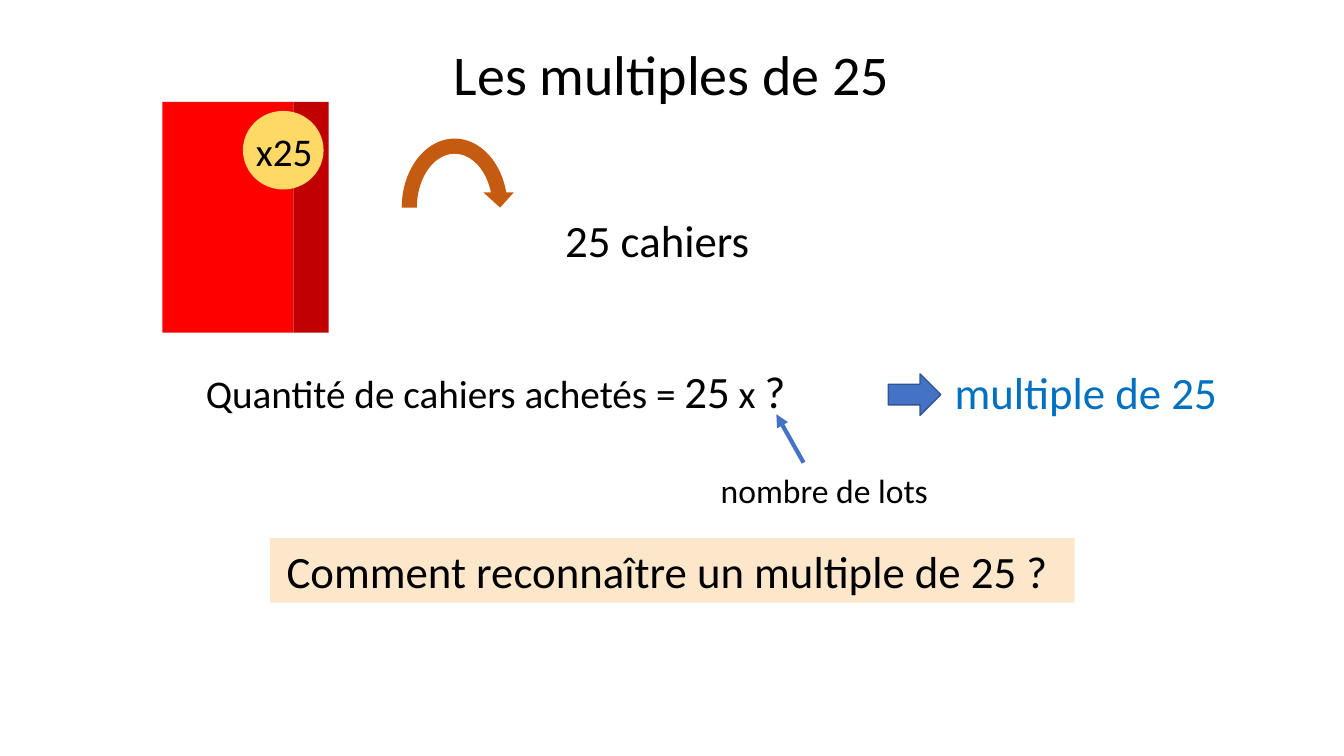
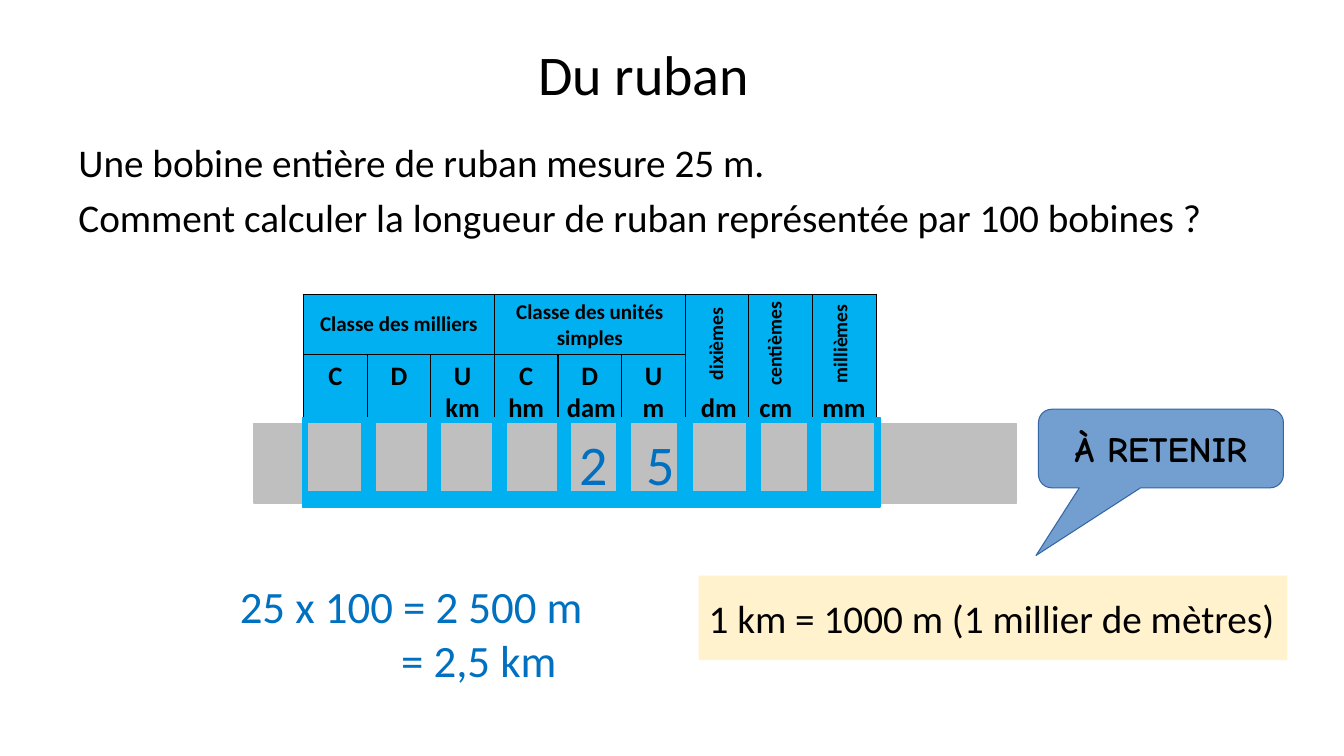
from dataclasses import dataclass
from typing import Optional

from lxml.etree import SubElement
from pptx import Presentation
from pptx.dml.color import RGBColor
from pptx.enum.shapes import MSO_CONNECTOR, MSO_SHAPE
from pptx.enum.text import MSO_ANCHOR, PP_ALIGN
from pptx.oxml.ns import qn
from pptx.util import Inches, Pt

COLORS = {
    "black": "000000", "white": "FFFFFF", "answer": "0070C0", "red": "FF0000",
    "dark_red": "C00000", "badge": "FFD966", "turn": "C55A11", "question": "FDE7CB",
    "arrow": "4472C4", "arrow_edge": "325491", "callout": "729FCF",
    "callout_edge": "3465A4", "reminder": "FFF2CC", "table": "00B0F0", "ribbon": "BFBFBF",
}
FONT = "Calibri"
LEFT, CENTER = PP_ALIGN.LEFT, PP_ALIGN.CENTER
TOP, MIDDLE = MSO_ANCHOR.TOP, MSO_ANCHOR.MIDDLE


@dataclass(frozen=True)
class Area:
    left: float
    top: float
    width: float
    height: float

    def lengths(self):
        return [Inches(value) for value in (self.left, self.top, self.width, self.height)]


@dataclass(frozen=True)
class Style:
    size: float
    color: str = "black"
    align: PP_ALIGN = CENTER
    anchor: MSO_ANCHOR = TOP
    bold: bool = False
    font: str = FONT
    wrap: bool = True


@dataclass(frozen=True)
class Figure:
    kind: MSO_SHAPE
    area: Area
    fill: str
    edge: Optional[str] = None
    edge_width: float = 1


@dataclass(frozen=True)
class Label:
    text: str
    area: Area
    style: Style
    rotation: float = 0


def color(name: str) -> RGBColor:
    return RGBColor.from_string(COLORS[name])


def format_span(span, style: Style) -> None:
    span.font.name = style.font
    span.font.size = Pt(style.size)
    span.font.bold = style.bold
    span.font.color.rgb = color(style.color)


def write(frame, text: str, style: Style) -> None:
    frame.text = text
    for para in frame.paragraphs:
        para.alignment = style.align
        for span in para.runs:
            format_span(span, style)


def write_box(box, text: str, style: Style) -> None:
    write(box.text_frame, text, style)
    box.text_frame.word_wrap = style.wrap
    box.text_frame.vertical_anchor = style.anchor


def add_figure(page, figure: Figure):
    shape = page.shapes.add_shape(figure.kind, *figure.area.lengths())
    shape.shadow.inherit = False
    shape.fill.solid()
    shape.fill.fore_color.rgb = color(figure.fill)
    if figure.edge:
        shape.line.color.rgb = color(figure.edge)
        shape.line.width = Pt(figure.edge_width)
    else:
        shape.line.fill.background()
    return shape


def add_label(page, label: Label):
    box = page.shapes.add_textbox(*label.area.lengths())
    write_box(box, label.text, label.style)
    box.rotation = label.rotation
    return box


def add_page(deck, title: str, area: Area):
    page = deck.slides.add_slide(deck.slide_layouts[5])
    box = page.shapes.title
    box.left, box.top, box.width, box.height = area.lengths()
    write_box(box, title, Style(40, anchor=MIDDLE))
    box.text_frame.paragraphs[0].line_spacing = 0.9
    return page


def add_arrow(page, start: tuple[float, float], end: tuple[float, float]) -> None:
    arrow = page.shapes.add_connector(
        MSO_CONNECTOR.STRAIGHT, *[Inches(value) for value in start + end])
    arrow.line.color.rgb = color("arrow")
    arrow.line.width = Pt(3)
    SubElement(arrow.line._get_or_add_ln(), qn("a:tailEnd"), type="triangle")
    SubElement(arrow._element.spPr, qn("a:effectLst"))


def format_cell(cell) -> None:
    properties = cell._tc.get_or_add_tcPr()
    for side in ("lnL", "lnR", "lnT", "lnB"):
        line = SubElement(properties, qn(f"a:{side}"), w=str(Pt(1)))
        fill = SubElement(line, qn("a:solidFill"))
        SubElement(fill, qn("a:srgbClr"), val=COLORS["black"])
    cell.fill.solid()
    cell.fill.fore_color.rgb = color("table")


def add_unit_table(page) -> None:
    area = Area(3.01, 2.92, 5.68, 1.33)
    table = page.shapes.add_table(2, 9, *area.lengths()).table
    for column in table.columns:
        column.width = Inches(area.width / 9)
    for row, height in zip(table.rows, (0.59, 0.74)):
        row.height = Inches(height)
    for row in table.rows:
        for cell in row.cells:
            format_cell(cell)
    for start, text in ((0, "Classe des milliers"), (3, "Classe des unités simples")):
        cell = table.cell(0, start)
        cell.merge(table.cell(0, start + 2))
        cell.vertical_anchor = MIDDLE
        write(cell.text_frame, text, Style(15, bold=True))
    for column in range(6, 9):
        table.cell(0, column).merge(table.cell(1, column))
    for column, text in enumerate(("C", "D", "U\nkm", "C\nhm", "D", "U\nm")):
        write(table.cell(1, column).text_frame, text, Style(19, bold=True))


def add_ribbon(page) -> None:
    strip = Area(2.52, 4.2, 7.56, 0.79)
    add_figure(page, Figure(MSO_SHAPE.RECTANGLE, strip, "ribbon", "ribbon"))
    digit_style = Style(40, "answer", anchor=MIDDLE)
    for digit, left in (("2", 5.59), ("5", 6.25)):
        add_label(page, Label(digit, Area(left, strip.top, 0.6, strip.height), digit_style))
    dividers = [(left, 0.13) for left in (3.59, 4.24, 4.89, 5.53, 6.12, 7.41, 8.01)]
    dividers += [(3, 0.05), (6.72, 0.15), (8.68, 0.05)]
    bars = [Area(left, 4.14, width, 0.88) for left, width in dividers]
    for bar in bars + [Area(3, 4.88, 5.73, 0.15)]:
        add_figure(page, Figure(MSO_SHAPE.RECTANGLE, bar, "table", "table"))


def build_multiples(deck) -> None:
    page = add_page(deck, "Les multiples de 25", Area(2, 0.33, 9.32, 0.88))
    question = add_figure(
        page, Figure(MSO_SHAPE.RECTANGLE, Area(2.68, 5.34, 7.98, 0.64), "question"))
    write_box(question, "Comment reconnaître un multiple de 25 ? ", Style(32))
    for figure in (
        Figure(MSO_SHAPE.CIRCULAR_ARROW, Area(3.91, 1.3, 1.2, 1.52), "turn"),
        Figure(MSO_SHAPE.RECTANGLE, Area(1.61, 1.01, 1.3, 2.29), "red"),
        Figure(MSO_SHAPE.RECTANGLE, Area(2.91, 1.01, 0.35, 2.29), "dark_red"),
        Figure(MSO_SHAPE.OVAL, Area(2.41, 1.1, 0.8, 0.78), "badge"),
        Figure(MSO_SHAPE.RIGHT_ARROW, Area(8.81, 3.71, 0.52, 0.41), "arrow", "arrow_edge"),
    ):
        add_figure(page, figure)
    for label in (
        Label("25 cahiers", Area(5.07, 2.06, 2.9, 0.64), Style(32)),
        Label("x25", Area(2.44, 1.21, 0.77, 0.57), Style(28, align=LEFT, wrap=False)),
        Label("nombre de lots", Area(7.05, 4.61, 2.28, 0.5),
              Style(24, align=LEFT, wrap=False)),
        Label("multiple de 25", Area(9.37, 3.57, 2.84, 0.64),
              Style(32, "answer", LEFT, wrap=False)),
    ):
        add_label(page, label)
    box = add_label(page, Label("", Area(0.49, 3.56, 8.85, 0.64), Style(28)))
    para = box.text_frame.paragraphs[0]
    for text, size in (("Quantité de cahiers achetés = ", 28), ("25", 32), (" x ", 28), ("?", 32)):
        span = para.add_run()
        span.text = text
        format_span(span, Style(size))
    add_arrow(page, (7.97, 4.59), (7.7, 4.11))


def build_ribbon(deck) -> None:
    page = add_page(deck, "Du ruban", Area(2, 0.33, 8.77, 0.88))
    problem = add_label(page, Label(
        "Une bobine entière de ruban mesure 25 m.\n"
        "Comment calculer la longueur de ruban représentée par 100 bobines ?",
        Area(0.68, 1.32, 11.93, 1.13), Style(28, align=LEFT)))
    for para, space in zip(problem.text_frame.paragraphs, (6, 12)):
        para.space_after = Pt(space)

    callout = add_figure(page, Figure(
        MSO_SHAPE.ROUNDED_RECTANGULAR_CALLOUT, Area(10.3, 4.06, 2.43, 0.78),
        "callout", "callout_edge", 0.75))
    for index, value in enumerate((-0.51, 1.36, 0.17)):
        callout.adjustments[index] = value
    write_box(callout, "À RETENIR",
              Style(25.4, anchor=MIDDLE, bold=True, font="Comic Neue", wrap=False))

    reminder = add_figure(
        page, Figure(MSO_SHAPE.RECTANGLE, Area(6.93, 5.71, 5.84, 0.84), "reminder"))
    write_box(reminder, "1 km = 1000 m (1 millier de mètres)",
              Style(28, align=LEFT, anchor=MIDDLE))

    answer = add_label(page, Label(
        "25 x 100 = 2 500 m\n= 2,5 km", Area(2.28, 5.69, 4.18, 1.18),
        Style(32, "answer", LEFT)))
    answer.text_frame.paragraphs[1]._p.get_or_add_pPr().set("marL", str(Inches(1.6)))

    add_unit_table(page)
    for text, left in (("dixièmes", 6.52), ("centièmes", 7.1), ("millièmes", 7.75)):
        add_label(page, Label(text, Area(left, 3.24, 1.16, 0.34), Style(14, bold=True), 270))
    add_ribbon(page)
    unit_style = Style(19, bold=True, wrap=False)
    for text, left, width in (
        ("dam", 5.52, 0.69), ("dm", 6.85, 0.56), ("cm", 7.43, 0.53), ("mm", 8.05, 0.64),
    ):
        add_label(page, Label(text, Area(left, 3.83, width, 0.42), unit_style))


def main() -> None:
    deck = Presentation()
    deck.slide_width = Inches(13.33)
    deck.slide_height = Inches(7.5)
    build_multiples(deck)
    build_ribbon(deck)
    deck.save("out.pptx")


if __name__ == "__main__":
    main()
